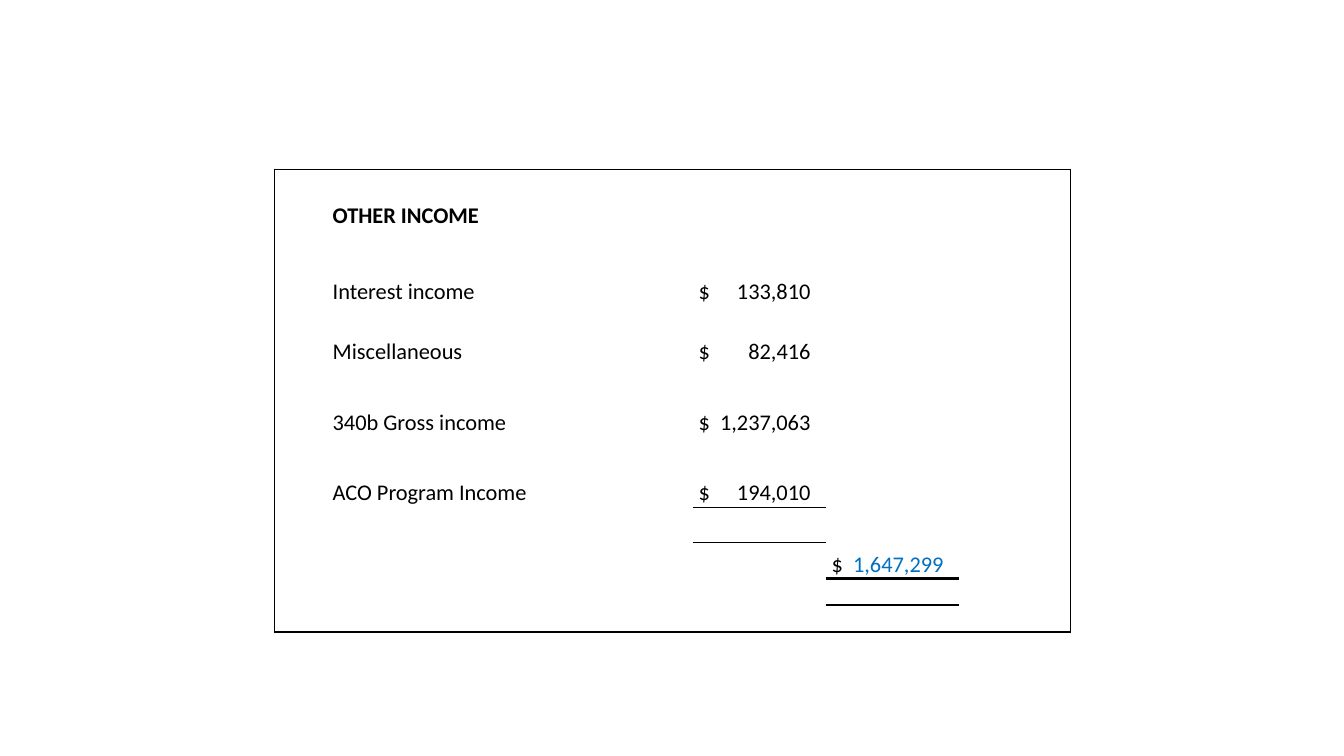
"""Build a slide with a framed table of other income."""
import pptx
import pptx.util
import pptx.dml.color
import pptx.enum.text
import pptx.oxml
import pptx.oxml.ns

Inches = pptx.util.Inches
Pt = pptx.util.Pt
qn = pptx.oxml.ns.qn

COLORS = {"ink": "000000", "total": "0070C0"}
FONT = "Calibri"
COLS = [0.57, 2.47, 1.11, 1.32, 1.32, 1.11]
ROWS = [0.25, 0.35, 0.4, 0.35, 0.25] + [0.35] * 6 + [0.36, 0.26, 0.27]
ITEMS = [
    ("Interest income", "133,810"),
    ("Miscellaneous", "82,416"),
    ("340b Gross income", "1,237,063"),
    ("ACO Program Income", "194,010"),
]
LABEL, AMOUNT, TOTAL = 1, 3, 4
HEAD, FIRST, LAST, SUM = 1, 3, 9, 11
TAB = Inches(1.16)


def add_grid(slide):
    table = slide.shapes.add_table(
        len(ROWS), len(COLS), Inches(2.72), Inches(1.68),
        Inches(sum(COLS)), Inches(sum(ROWS))).table
    table.first_row = False
    table.horz_banding = False
    style = table._tbl.tblPr.find(qn("a:tableStyleId"))
    style.text = "{2D5ABB26-0587-4C30-8999-92F81FD0307C}"
    for col, width in zip(table.columns, COLS):
        col.width = Inches(width)
    for row, height in zip(table.rows, ROWS):
        row.height = Inches(height)
    return table


def add_edge(cell, side, width):
    line = pptx.oxml.ns.nsdecls("a")
    cell._tc.get_or_add_tcPr().append(pptx.oxml.parse_xml(
        f'<a:ln{side} {line} w="{int(Pt(width))}"><a:solidFill>'
        f'<a:srgbClr val="{COLORS["ink"]}"/></a:solidFill></a:ln{side}>'))


def find_edges(row, col):
    edges = {}
    if col == 0:
        edges["L"] = 1
    if col == len(COLS) - 1:
        edges["R"] = 1
    if row == 0:
        edges["T"] = 1
    if row == len(ROWS) - 1:
        edges["B"] = 1
    for place, width in {(LAST, AMOUNT): 0.5, (SUM, TOTAL): 2}.items():
        if (row, col) == place:
            edges["B"] = width
        if (row - 1, col) == place:
            edges["T"] = width
    return edges


def set_cell(cell, edges):
    cell.margin_left = cell.margin_right = cell.margin_top = Inches(0.01)
    cell.margin_bottom = 0
    cell.vertical_anchor = pptx.enum.text.MSO_ANCHOR.BOTTOM
    for side, width in edges.items():
        add_edge(cell, side, width)
    cell.fill.background()
    if not cell.text_frame.text:
        end = cell.text_frame.paragraphs[0]._p.get_or_add_endParaRPr()
        end.set("sz", "1000")


def style_run(run, color="ink", bold=False):
    run.font.name = FONT
    run.font.size = Pt(16)
    run.font.bold = bold
    run.font.color.rgb = pptx.dml.color.RGBColor.from_string(COLORS[color])


def put_label(cell, text, bold=False):
    cell.text_frame.text = text
    style_run(cell.text_frame.paragraphs[0].runs[0], bold=bold)


def put_sum(cell, value, color="ink"):
    para = cell.text_frame.paragraphs[0]
    for text, tone in ((" $\t", "ink"), (value, color)):
        run = para.add_run()
        run.text = text
        style_run(run, tone)
    para._p.get_or_add_pPr().append(pptx.oxml.parse_xml(
        f'<a:tabLst {pptx.oxml.ns.nsdecls("a")}>'
        f'<a:tab pos="{int(TAB)}" algn="r"/></a:tabLst>'))


def main():
    deck = pptx.Presentation()
    deck.slide_width = Inches(13.33)
    deck.slide_height = Inches(7.5)
    slide = deck.slides.add_slide(deck.slide_layouts[6])
    table = add_grid(slide)
    put_label(table.cell(HEAD, LABEL), "OTHER INCOME", bold=True)
    for row, (label, value) in zip(range(FIRST, LAST + 1, 2), ITEMS):
        put_label(table.cell(row, LABEL), label)
        put_sum(table.cell(row, AMOUNT), value)
    put_sum(table.cell(SUM, TOTAL), "1,647,299", "total")
    for row in range(len(ROWS)):
        for col in range(len(COLS)):
            set_cell(table.cell(row, col), find_edges(row, col))
    deck.save("out.pptx")


if __name__ == "__main__":
    main()
